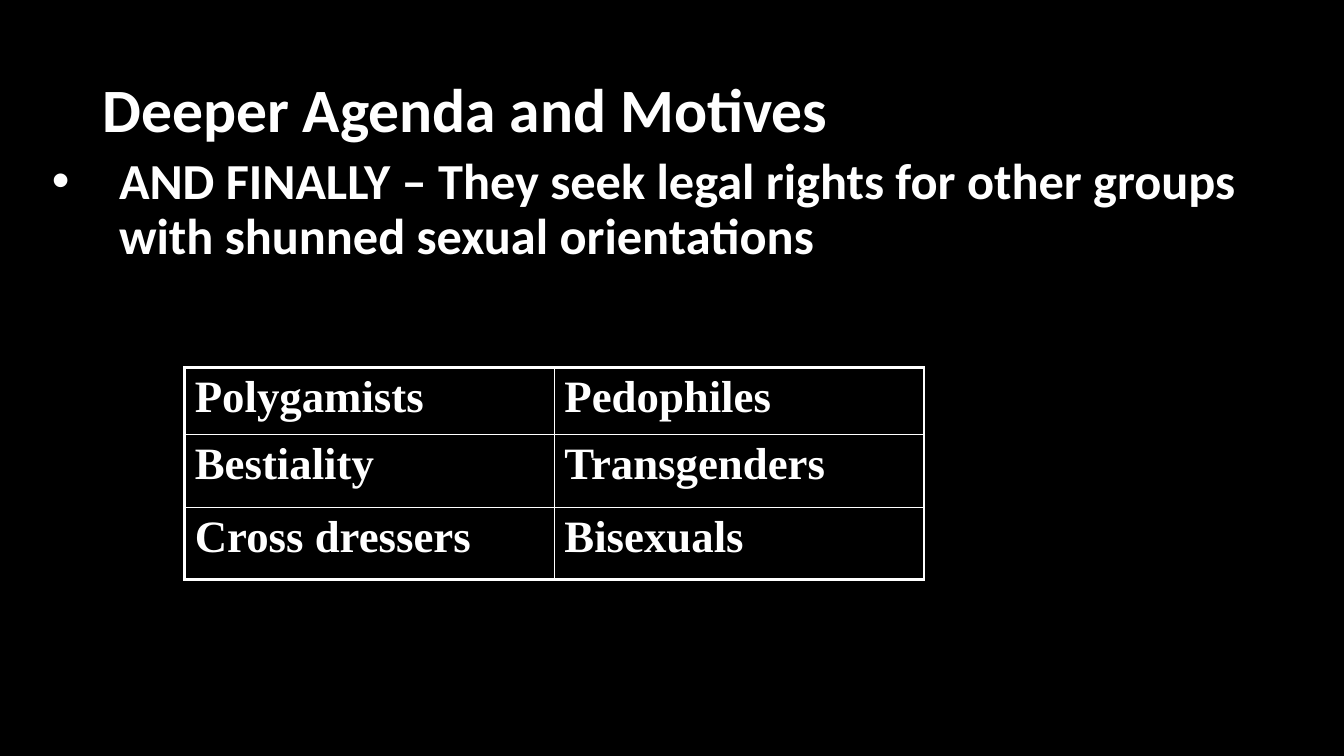
from lxml.etree import SubElement
from pptx import Presentation
from pptx.dml.color import RGBColor
from pptx.enum.text import MSO_ANCHOR as Anchor
from pptx.oxml import parse_xml
from pptx.oxml.ns import nsdecls, qn
from pptx.util import Emu, Pt

BLACK = RGBColor(0x00, 0x00, 0x00)
WHITE = RGBColor(0xFF, 0xFF, 0xFF)
SANS, SERIF = "Calibri", "Times New Roman"
THICK, THIN = 2.25, 1

GROUPS = [
    ["Polygamists", "Pedophiles"],
    ["Bestiality", "Transgenders"],
    ["Cross dressers", "Bisexuals"],
]


def px(n):
    return Emu(n * 9525)


class Deck:
    def __init__(self, wide, high):
        self.prs = Presentation()
        self.prs.slide_width, self.prs.slide_height = px(wide), px(high)
        self.slide = self.prs.slides.add_slide(self.prs.slide_layouts[6])
        back = self.slide.background.fill
        back.solid()
        back.fore_color.rgb = BLACK

    def add_run(self, para, text, size, face):
        run = para.add_run()
        run.text = text
        font = run.font
        font.name, font.size, font.bold = face, Pt(size), True
        font.color.rgb = WHITE

    def text(self, box, text, size, anchor=Anchor.TOP, indent=0):
        """Add a text box; an indent in px makes it a bullet."""
        frame = self.slide.shapes.add_textbox(*map(px, box)).text_frame
        frame.word_wrap = True
        frame.vertical_anchor = anchor
        para = frame.paragraphs[0]
        para.line_spacing = 0.9
        if indent:
            props = para._p.get_or_add_pPr()
            props.set("marL", str(px(indent)))
            props.set("indent", str(px(-indent)))
            SubElement(props, qn("a:buFont"), typeface="Arial")
            SubElement(props, qn("a:buChar"), char="•")
        self.add_run(para, text, size, SANS)

    def edge(self, cell, sides):
        """Draw the borders, given as widths in left, right, top, bottom order."""
        props = cell._tc.get_or_add_tcPr()
        for i, (side, width) in enumerate(zip("LRTB", sides)):
            props.insert(i, parse_xml(
                f'<a:ln{side} {nsdecls("a")} w="{Pt(width)}"><a:solidFill>'
                f'<a:srgbClr val="{WHITE}"/></a:solidFill></a:ln{side}>'))

    def table(self, left, top, cols, rows, data, size):
        """Add a grid with a thick frame and thin inner lines."""
        box = map(px, (left, top, sum(cols), sum(rows)))
        grid = self.slide.shapes.add_table(len(rows), len(cols), *box).table
        grid.first_row = grid.horz_banding = False
        for col, wide in zip(grid.columns, cols):
            col.width = px(wide)
        for row, high in zip(grid.rows, rows):
            row.height = px(high)
        for r, line in enumerate(data):
            for c, text in enumerate(line):
                cell = grid.cell(r, c)
                cell.fill.background()
                outer = (c == 0, c == len(cols) - 1, r == 0, r == len(rows) - 1)
                self.edge(cell, [THICK if out else THIN for out in outer])
                self.add_run(cell.text_frame.paragraphs[0], text, size, SERIF)


def main():
    deck = Deck(1280, 720)
    deck.text((88, 38, 1104, 139), "Deeper Agenda and Motives", 44, Anchor.MIDDLE)
    deck.text((40, 144, 1192, 123),
              "AND FINALLY – They seek legal rights for other groups "
              "with shunned sexual orientations", 36, indent=64)
    deck.table(176, 350, [352, 352], [64, 69, 69], GROUPS, 32)
    deck.prs.save("out.pptx")


if __name__ == "__main__":
    main()
